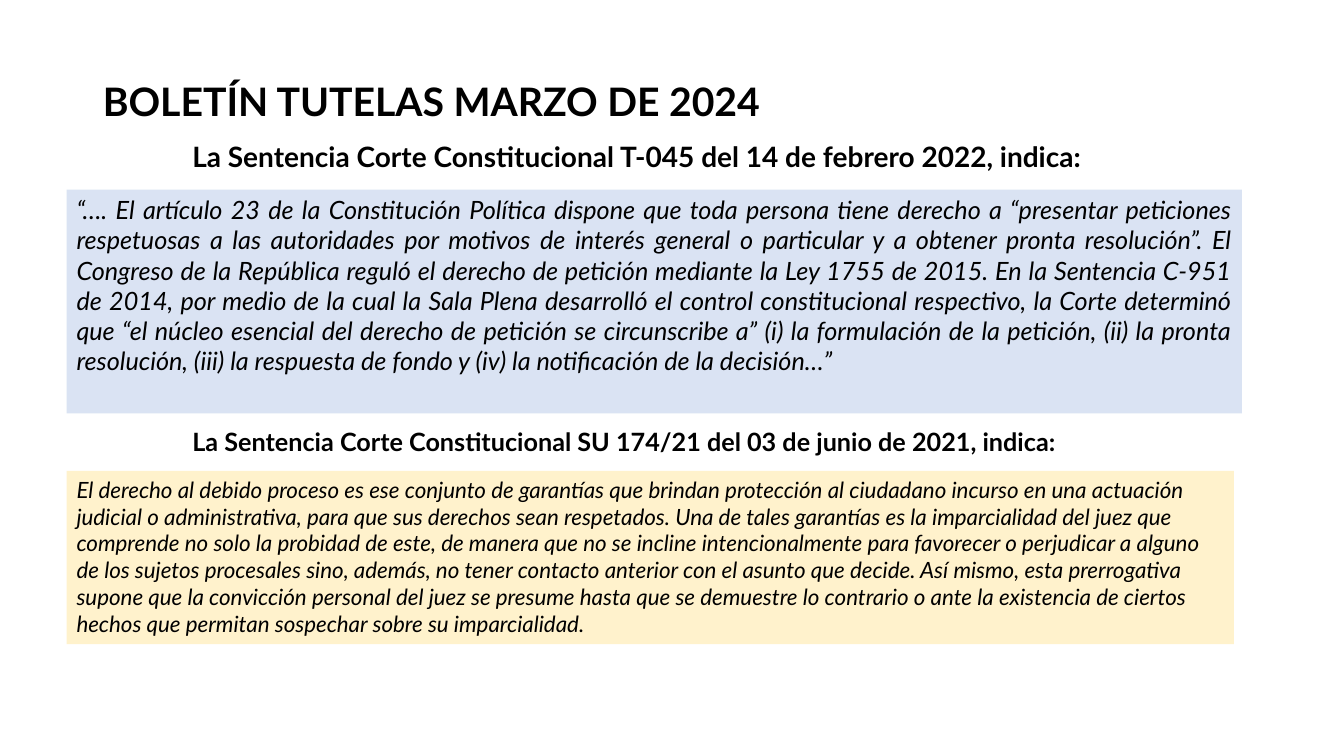
from pptx import Presentation
from pptx.dml.color import RGBColor
from pptx.enum.shapes import MSO_SHAPE
from pptx.enum.text import MSO_ANCHOR as Anchor, PP_ALIGN as Align
from pptx.util import Pt

BLACK = RGBColor(0x00, 0x00, 0x00)
PALE_BLUE = RGBColor(0xDA, 0xE3, 0xF3)
PALE_YELLOW = RGBColor(0xFF, 0xF2, 0xCC)

PETITION_RIGHT = (
    "“…. El artículo 23 de la Constitución Política dispone que toda persona tiene "
    "derecho a “presentar peticiones respetuosas a las autoridades por motivos de "
    "interés general o particular y a obtener pronta resolución”. El Congreso de la "
    "República reguló el derecho de petición mediante la Ley 1755 de 2015. En la "
    "Sentencia C-951 de 2014, por medio de la cual la Sala Plena desarrolló el control "
    "constitucional respectivo, la Corte determinó que “el núcleo esencial del derecho "
    "de petición se circunscribe a” (i) la formulación de la petición, (ii) la pronta "
    "resolución, (iii) la respuesta de fondo y (iv) la notificación de la decisión…”"
)
DUE_PROCESS = (
    "El derecho al debido proceso es ese conjunto de garantías que brindan protección "
    "al ciudadano incurso en una actuación judicial o administrativa, para que sus "
    "derechos sean respetados. Una de tales garantías es la imparcialidad del juez que "
    "comprende no solo la probidad de este, de manera que no se incline "
    "intencionalmente para favorecer o perjudicar a alguno de los sujetos procesales "
    "sino, además, no tener contacto anterior con el asunto que decide. Así mismo, esta "
    "prerrogativa supone que la convicción personal del juez se presume hasta que se "
    "demuestre lo contrario o ante la existencia de ciertos hechos que permitan "
    "sospechar sobre su imparcialidad."
)


class Bulletin:
    """Holds the bulletin's style and the slide being filled."""

    font_name = "Lato"
    text_color = BLACK

    def __init__(self, slide):
        self.slide = slide

    def set_text(self, holder, text, size, align=Align.LEFT, bold=False, italic=False):
        frame = holder.text_frame
        frame.word_wrap = True
        frame.vertical_anchor = Anchor.TOP
        frame.text = text
        paragraph = frame.paragraphs[0]
        paragraph.alignment = align
        for run in paragraph.runs:
            run.font.name = self.font_name
            run.font.size = Pt(size)
            run.font.bold = bold
            run.font.italic = italic
            run.font.color.rgb = self.text_color

    def heading(self, left, top, width, height, text, size):
        box = self.slide.shapes.add_textbox(Pt(left), Pt(top), Pt(width), Pt(height))
        self.set_text(box, text, size, bold=True)

    def quotation(self, left, top, width, height, text, size, fill, align=Align.LEFT):
        panel = self.slide.shapes.add_shape(
            MSO_SHAPE.RECTANGLE, Pt(left), Pt(top), Pt(width), Pt(height)
        )
        panel.shadow.inherit = False
        panel.fill.solid()
        panel.fill.fore_color.rgb = fill
        panel.line.fill.background()
        self.set_text(panel, text, size, align, italic=True)


def main():
    deck = Presentation()
    deck.slide_width, deck.slide_height = Pt(960), Pt(540)
    bulletin = Bulletin(deck.slides.add_slide(deck.slide_layouts[6]))

    bulletin.heading(66.4, 51.8, 761, 41, "BOLETÍN TUTELAS MARZO DE 2024", 28)
    bulletin.heading(
        130.3, 95.8, 724.3, 31.7,
        "La Sentencia Corte Constitucional T-045 del 14 de febrero 2022, indica:", 20,
    )
    bulletin.quotation(
        47.6, 135.4, 839.5, 159.9, PETITION_RIGHT, 18, PALE_BLUE, Align.JUSTIFY
    )
    bulletin.heading(
        130.3, 301, 747.4, 28.8,
        "La Sentencia Corte Constitucional SU 174/21 del 03 de junio de 2021, indica:", 18,
    )
    bulletin.quotation(47.6, 336.3, 833.8, 123.8, DUE_PROCESS, 16, PALE_YELLOW)

    deck.save("out.pptx")


if __name__ == "__main__":
    main()
